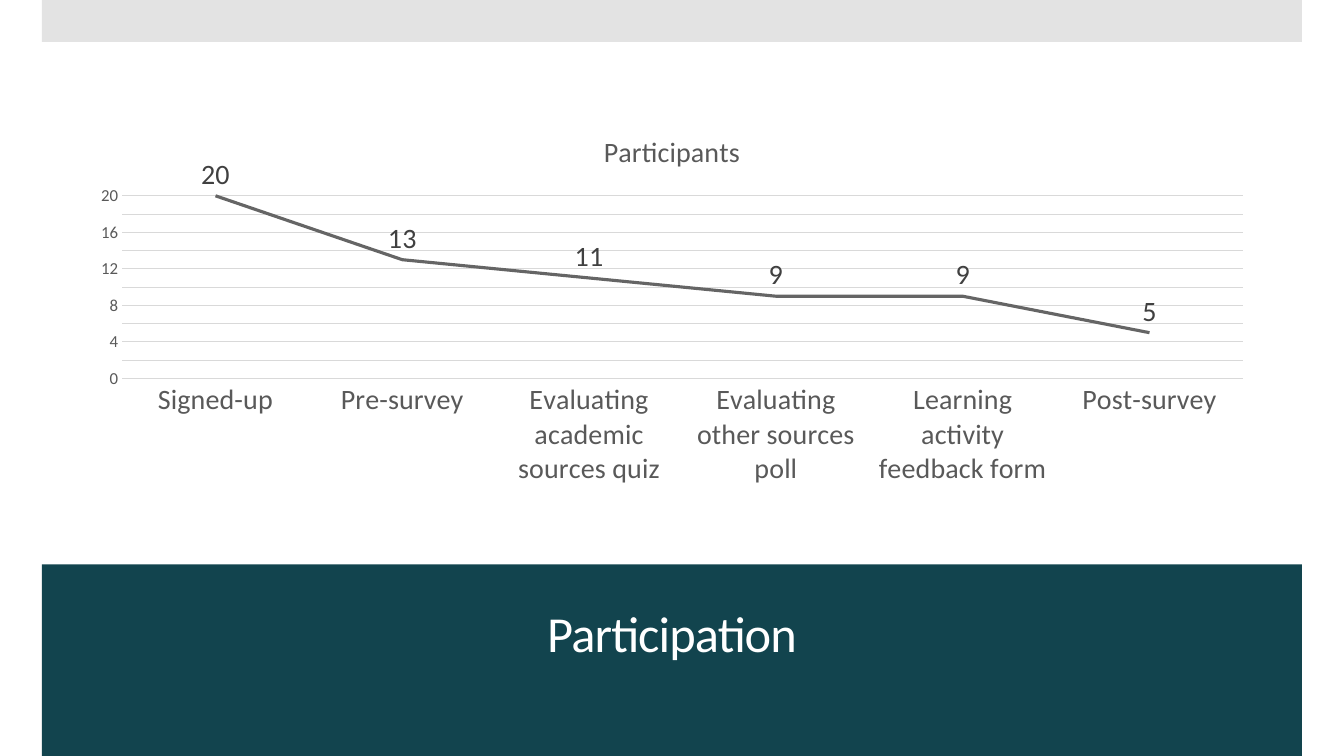
from dataclasses import dataclass

from lxml.etree import SubElement
from pptx import Presentation
from pptx.chart.data import CategoryChartData
from pptx.dml.color import RGBColor
from pptx.enum.chart import XL_CHART_TYPE as ChartType
from pptx.enum.chart import XL_LABEL_POSITION as LabelPosition
from pptx.enum.chart import XL_TICK_MARK as TickMark
from pptx.enum.shapes import MSO_SHAPE as Preset
from pptx.enum.text import MSO_ANCHOR as Anchor
from pptx.enum.text import PP_ALIGN as Align
from pptx.oxml.ns import qn
from pptx.util import Inches, Pt


@dataclass(frozen=True)
class Theme:
    font: str = "Calibri"
    teal: str = "12444E"
    silver: str = "C8C8C8"
    white: str = "FFFFFF"
    black: str = "000000"
    grid: str = "D9D9D9"
    axis_text: str = "595959"
    label_text: str = "404040"
    series: str = "656565"
    title_size: float = 36
    chart_size: float = 20
    value_size: float = 12
    base_size: float = 10


class SlideBuilder:
    """Places elements on a grid of 32 columns by 18 rows."""

    COLUMNS, ROWS = 32, 18

    def __init__(self, presentation, theme):
        self.theme = theme
        self.column = presentation.slide_width / self.COLUMNS
        self.row = presentation.slide_height / self.ROWS
        self.slide = presentation.slides.add_slide(presentation.slide_layouts[6])
        self.paint(self.slide.background.fill, theme.white)

    def box(self, left, top, width, height):
        return (round(left * self.column), round(top * self.row),
                round(width * self.column), round(height * self.row))

    def paint(self, fill, color):
        fill.solid()
        fill.fore_color.rgb = RGBColor.from_string(color)

    def style_font(self, font, size, color):
        font.name = self.theme.font
        font.size = Pt(size)
        font.bold = False
        font.color.rgb = RGBColor.from_string(color)

    def style_line(self, line, color, width):
        self.paint(line.fill, color)
        line.width = Pt(width)

    def band(self, place, color, opacity=100):
        shape = self.slide.shapes.add_shape(Preset.RECTANGLE, *self.box(*place))
        shape.shadow.inherit = False
        shape.line.fill.background()
        self.paint(shape.fill, color)
        if opacity < 100:
            color_element = shape.fill._xPr.find(qn("a:solidFill"))[0]
            SubElement(color_element, qn("a:alpha"), val=str(opacity * 1000))

    def heading(self, place, text):
        frame = self.slide.shapes.add_textbox(*self.box(*place)).text_frame
        frame.word_wrap = True
        frame.vertical_anchor = Anchor.MIDDLE
        paragraph = frame.paragraphs[0]
        paragraph.alignment = Align.CENTER
        paragraph.line_spacing = 0.9
        run = paragraph.add_run()
        run.text = text
        self.style_font(run.font, self.theme.title_size, self.theme.white)
        run.font._element.set("spc", "-60")

    def line_chart(self, place, title, values):
        theme = self.theme
        data = CategoryChartData()
        data.categories = list(values)
        data.add_series(title, list(values.values()))
        chart = self.slide.shapes.add_chart(ChartType.LINE, *self.box(*place), data).chart
        self.style_font(chart.font, theme.base_size, theme.black)
        chart.has_legend = False

        # Chart title
        chart.has_title = True
        run = chart.chart_title.text_frame.paragraphs[0].add_run()
        run.text = title
        self.style_font(run.font, theme.chart_size, theme.axis_text)
        chart.chart_title.include_in_layout = False

        # Axes
        sizes = ((chart.category_axis, theme.chart_size), (chart.value_axis, theme.value_size))
        for axis, size in sizes:
            axis.major_tick_mark = axis.minor_tick_mark = TickMark.NONE
            self.style_font(axis.tick_labels.font, size, theme.axis_text)
        self.style_line(chart.category_axis.format.line, theme.grid, 0.75)
        value_axis = chart.value_axis
        value_axis.format.line.fill.background()
        value_axis.minimum_scale, value_axis.maximum_scale = 0, 20
        value_axis.major_unit = 2
        self.style_line(value_axis.major_gridlines.format.line, theme.grid, 0.75)

        # Series and its labels
        plot = chart.plots[0]
        plot.vary_by_categories = False
        series = plot.series[0]
        series.smooth = False
        self.style_line(series.format.line, theme.series, 2.25)
        labels = series.data_labels
        labels.show_value = True
        labels.position = LabelPosition.ABOVE
        self.style_font(labels.font, theme.chart_size, theme.label_text)


def main():
    presentation = Presentation()
    presentation.slide_width, presentation.slide_height = Inches(13.33), Inches(7.5)
    theme = Theme()
    builder = SlideBuilder(presentation, theme)

    # Title band at the foot, thin band at the head
    builder.band((1, 13.44, 30, 4.56), theme.teal)
    builder.heading((1.68, 13.8, 28.64, 2.69), "Participation")
    builder.band((1, 0, 30, 1), theme.silver, opacity=50)

    # Participants at each stage
    builder.line_chart((1.84, 2.71, 28.32, 9.05), "Participants", {
        "Signed-up": 20,
        "Pre-survey": 13,
        "Evaluating academic sources quiz": 11,
        "Evaluating other sources poll": 9,
        "Learning activity feedback form": 9,
        "Post-survey": 5,
    })
    presentation.save("out.pptx")


if __name__ == "__main__":
    main()
